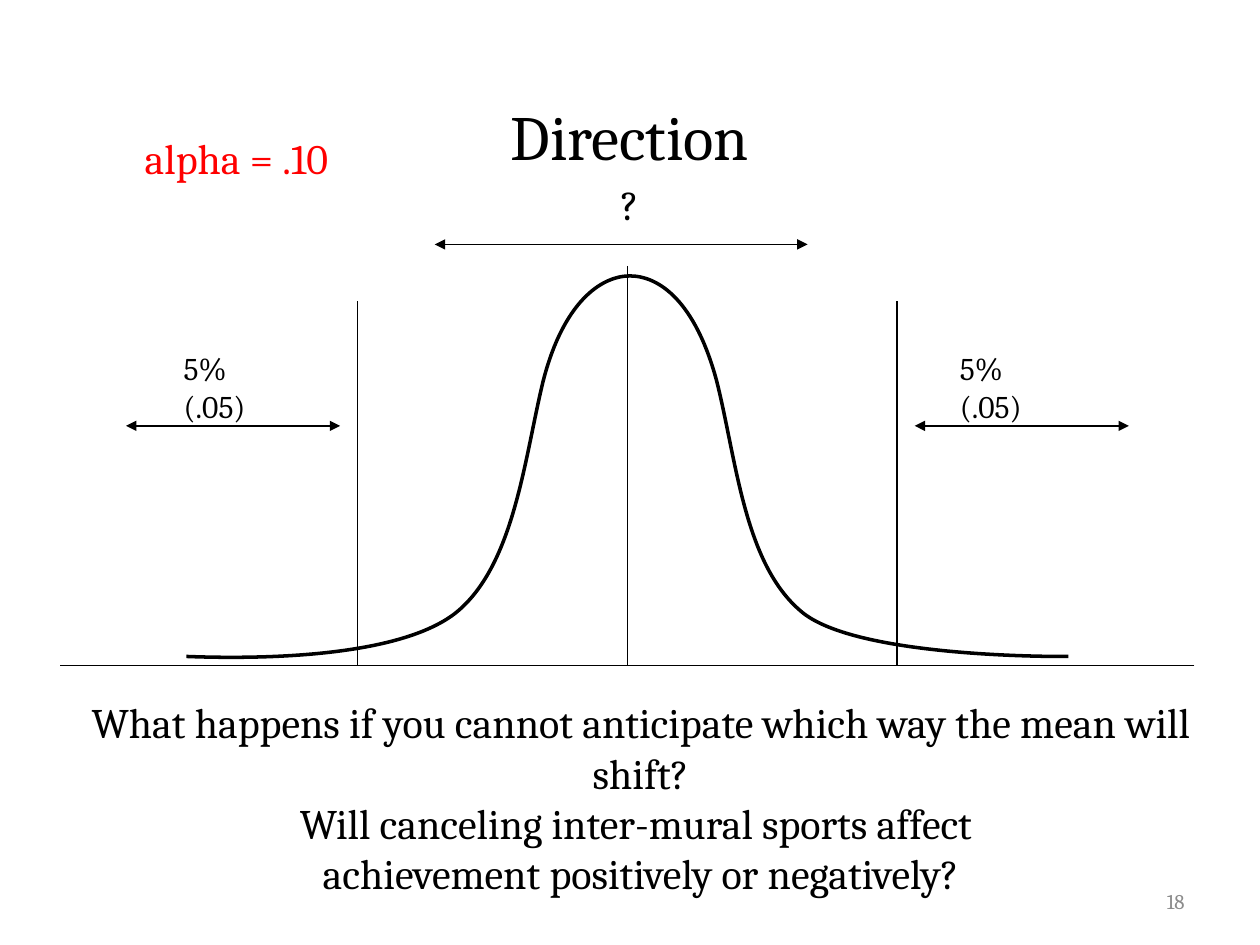
from dataclasses import dataclass

from lxml import etree
from pptx import Presentation
from pptx.dml.color import RGBColor
from pptx.enum.shapes import MSO_CONNECTOR
from pptx.enum.text import MSO_ANCHOR, PP_ALIGN
from pptx.oxml.ns import qn
from pptx.util import Inches, Pt

STRAIGHT = MSO_CONNECTOR.STRAIGHT
LEFT, CENTER, RIGHT = PP_ALIGN.LEFT, PP_ALIGN.CENTER, PP_ALIGN.RIGHT
TOP, MIDDLE = MSO_ANCHOR.TOP, MSO_ANCHOR.MIDDLE


@dataclass(frozen=True)
class Theme:
    font: str = "Cambria"
    ink: str = "000000"
    accent: str = "FF0000"
    muted: str = "8C8C8C"
    title: int = 36
    body: int = 24
    label: int = 18
    footer: int = 12
    thin: float = 0.75
    thick: float = 2


THEME = Theme()

TITLE = "Direction"
TITLE_BOX = (0.75, 0.45, 8.5, 1.25)
QUESTIONS = [
    "What happens if you cannot anticipate which way the mean will shift?",
    "Will canceling inter-mural sports affect \vachievement positively or negatively?",
]
TAIL_LABEL = "5% (.05)"
TEXTS = [
    (QUESTIONS, (0.3, 5.48, 9.57, 1.31), {"align": CENTER}),
    (["?"], (4.83, 1.37, 0.35, 0.5), {}),
    ([TAIL_LABEL], (7.52, 2.72, 1.08, 0.4), {"size": THEME.label}),
    ([TAIL_LABEL], (1.36, 2.72, 1.08, 0.4), {"size": THEME.label}),
    (["alpha = .10"], (1.05, 1, 1.71, 0.5), {"color": THEME.accent}),
    (["18"], (7.17, 6.95, 2.33, 0.4),
     {"size": THEME.footer, "color": THEME.muted, "align": RIGHT, "anchor": MIDDLE}),
]

MEAN, BASE = 4.98, 5.28
CUTOFF_OFFSET, CUTOFF_TOP = 2.14, 2.39
TAIL_NEAR, TAIL_FAR, TAIL_Y = 2.28, 3.98, 3.38
AXES = [
    (MEAN, 2.12, MEAN, BASE),
    (0.48, BASE, 9.15, BASE),
    (MEAN, 2.11, MEAN, BASE),
    (9.48, BASE, 0.81, BASE),
]
SHIFT_ARROW = (6.41, 1.94, 3.45, 1.94)

CURVE_UNITS = 100
CURVE_START = (1.48, 5.21)
CURVE = [
    ((2, 5.23), (3.14, 5.23), (3.61, 4.87)),
    ((4.08, 4.5), (4.16, 3.65), (4.31, 3.03)),
    ((4.47, 2.4), (4.77, 2.19), (5, 2.19)),
    ((5.23, 2.19), (5.52, 2.39), (5.69, 3.03)),
    ((5.85, 3.67), (5.91, 4.5), (6.38, 4.87)),
    ((6.85, 5.23), (8.48, 5.21), (8.48, 5.21)),
]


def write_text(frame, paragraphs, size=THEME.body, color=THEME.ink, align=LEFT, anchor=TOP):
    frame.word_wrap = True
    frame.vertical_anchor = anchor
    for index, wording in enumerate(paragraphs):
        paragraph = frame.add_paragraph() if index else frame.paragraphs[0]
        paragraph.text = wording
        paragraph.alignment = align
        for run in paragraph.runs:
            run.font.name = THEME.font
            run.font.size = Pt(size)
            run.font.color.rgb = RGBColor.from_string(color)


def ink_line(line, width):
    line.color.rgb = RGBColor.from_string(THEME.ink)
    line.width = Pt(width)


def draw_line(slide, ends, arrows=False):
    rule = slide.shapes.add_connector(STRAIGHT, *map(Inches, ends))
    ink_line(rule.line, THEME.thin)
    properties = rule._element.spPr
    if arrows:
        for end in ("a:headEnd", "a:tailEnd"):
            etree.SubElement(properties.find(qn("a:ln")), qn(end), type="triangle")
    etree.SubElement(properties, qn("a:effectLst"))


def curve_units(point):
    return tuple(round(value * CURVE_UNITS) for value in point)


def draw_bell(slide):
    builder = slide.shapes.build_freeform(
        *curve_units(CURVE_START), scale=Inches(1) / CURVE_UNITS
    )
    builder.add_line_segments(
        [curve_units(point) for segment in CURVE for point in segment], close=False
    )
    bell = builder.convert_to_shape()
    bell.shadow.inherit = False
    bell.fill.background()
    ink_line(bell.line, THEME.thick)

    outline = next(bell._element.iter(qn("a:path")))
    steps = outline.findall(qn("a:lnTo"))
    for first in range(0, len(steps), 3):
        cubic = etree.SubElement(outline, qn("a:cubicBezTo"))
        for step in steps[first:first + 3]:
            cubic.append(step[0])
            outline.remove(step)


def main():
    """Build the slide on a two-tailed test with no anticipated direction."""
    deck = Presentation()
    deck.slide_width, deck.slide_height = Inches(10), Inches(7.5)
    slide = deck.slides.add_slide(deck.slide_layouts[5])

    title = slide.shapes.title
    title.left, title.top, title.width, title.height = map(Inches, TITLE_BOX)
    write_text(title.text_frame, [TITLE], size=THEME.title, align=CENTER, anchor=MIDDLE)

    for axis in AXES:
        draw_line(slide, axis)
    draw_line(slide, SHIFT_ARROW, arrows=True)
    for side in (1, -1):
        cutoff = MEAN + side * CUTOFF_OFFSET
        draw_line(slide, (cutoff, BASE, cutoff, CUTOFF_TOP))
        near, far = MEAN + side * TAIL_NEAR, MEAN + side * TAIL_FAR
        draw_line(slide, (near, TAIL_Y, far, TAIL_Y), arrows=True)
    draw_bell(slide)

    for paragraphs, box, style in TEXTS:
        write_text(slide.shapes.add_textbox(*map(Inches, box)).text_frame, paragraphs, **style)

    deck.save("out.pptx")


if __name__ == "__main__":
    main()
